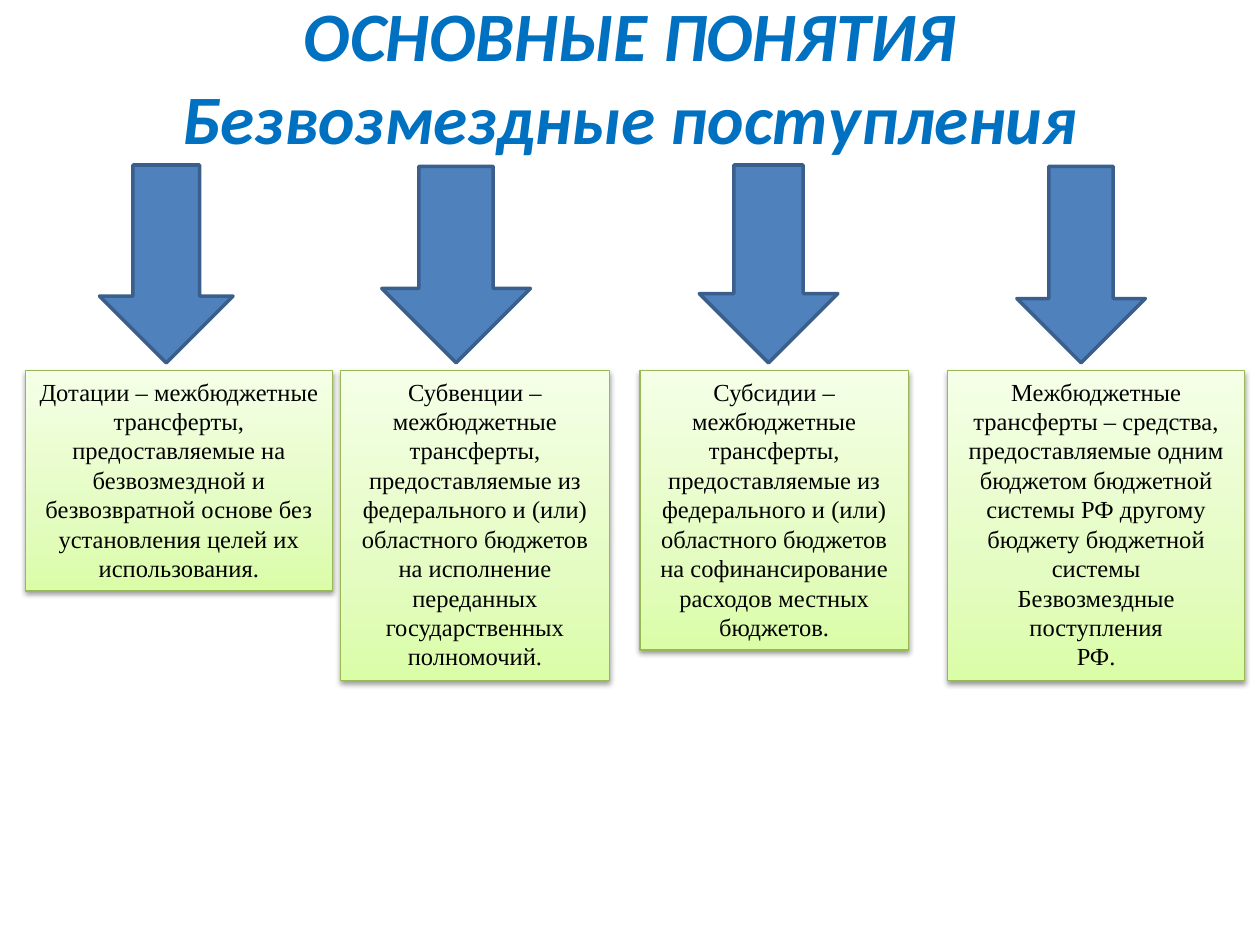
from dataclasses import dataclass

import lxml.etree
import pptx
import pptx.dml.color
import pptx.enum.shapes
import pptx.enum.text
import pptx.oxml.ns
import pptx.util

Inches = pptx.util.Inches
Pt = pptx.util.Pt
qn = pptx.oxml.ns.qn


@dataclass(frozen=True)
class Theme:
    title_font: str = "Calibri"
    title_size: float = 39.6
    title_color: str = "0070C0"
    body_font: str = "Times New Roman"
    body_size: float = 14
    body_color: str = "000000"
    arrow_fill: str = "4F81BD"
    arrow_line: str = "3A5F8C"
    card_line: str = "98B955"
    card_gradient: tuple = ((0, "DAFDA7"), (35, "E4FCC2"), (100, "F5FFE7"))
    shadow: str = "000000"


THEME = Theme()

TITLE_LINES = ["ОСНОВНЫЕ ПОНЯТИЯ", "Безвозмездные поступления"]
ARROW_BOTTOM = 2.88
CARD_TOP = 2.94

# Arrow: left, top, width. Card: left, width, height.
CONCEPTS = [
    {
        "arrow": (0.79, 1.31, 1.06),
        "card": (0.2, 2.44, 1.75),
        "text": [
            "Дотации – межбюджетные трансферты, предоставляемые на",
            "безвозмездной и безвозвратной основе без установления целей их",
            "использования.",
        ],
    },
    {
        "arrow": (3.03, 1.32, 1.18),
        "card": (2.7, 2.14, 2.46),
        "text": [
            "Субвенции – межбюджетные трансферты, предоставляемые из",
            "федерального и (или) областного бюджетов на исполнение переданных",
            "государственных полномочий.",
        ],
    },
    {
        "arrow": (5.55, 1.31, 1.1),
        "card": (5.08, 2.13, 2.22),
        "text": [
            "Субсидии – межбюджетные трансферты, предоставляемые из",
            "федерального и (или) областного бюджетов на софинансирование",
            "расходов местных бюджетов.",
        ],
    },
    {
        "arrow": (8.07, 1.32, 1.02),
        "card": (7.52, 2.36, 2.46),
        "text": [
            "Межбюджетные трансферты – средства, предоставляемые одним",
            "бюджетом бюджетной системы РФ другому бюджету бюджетной системы",
            "Безвозмездные поступления",
            "РФ.",
        ],
    },
]


def rgb(color):
    return pptx.dml.color.RGBColor.from_string(color)


def add_run(paragraph, text, font, size, color, emphasis=False):
    run = paragraph.add_run()
    run.text = text
    run.font.name = font
    run.font.size = Pt(size)
    run.font.color.rgb = rgb(color)
    run.font.bold = run.font.italic = emphasis


def add_preset(slide, preset, left, top, width, height, line_color, line_width):
    shape = slide.shapes.add_shape(
        preset, Inches(left), Inches(top), Inches(width), Inches(height)
    )
    shape.shadow.inherit = False
    shape.line.color.rgb = rgb(line_color)
    shape.line.width = Pt(line_width)
    return shape


def add_color(parent, color):
    return lxml.etree.SubElement(parent, qn("a:srgbClr"), val=color)


def set_card_gradient(shape):
    """Replace the two default stops with the theme's, running bottom to top."""
    shape.fill.gradient()
    shape.fill.gradient_angle = 90
    stops = shape.element.spPr.find(qn("a:gradFill")).find(qn("a:gsLst"))
    for stop in list(stops):
        stops.remove(stop)
    for position, color in THEME.card_gradient:
        stop = lxml.etree.SubElement(stops, qn("a:gs"), pos=str(position * 1000))
        add_color(stop, color)


def add_card_shadow(shape):
    effects = shape.element.spPr.find(qn("a:effectLst"))
    shadow = lxml.etree.SubElement(
        effects,
        qn("a:outerShdw"),
        blurRad=str(Pt(3.1)),
        dist=str(Pt(1.6)),
        dir="5400000",
        rotWithShape="0",
    )
    color = add_color(shadow, THEME.shadow)
    lxml.etree.SubElement(color, qn("a:alpha"), val="38000")


def add_title(slide):
    box = slide.shapes.add_textbox(Inches(0.5), Inches(0), Inches(9), Inches(1.19))
    frame = box.text_frame
    frame.word_wrap = True
    frame.margin_top = frame.margin_bottom = 0
    frame.vertical_anchor = pptx.enum.text.MSO_ANCHOR.MIDDLE
    paragraph = frame.paragraphs[0]
    paragraph.alignment = pptx.enum.text.PP_ALIGN.CENTER
    for index, line in enumerate(TITLE_LINES):
        if index:
            paragraph.add_line_break()
        add_run(paragraph, line, THEME.title_font, THEME.title_size,
                THEME.title_color, emphasis=True)


def add_arrow(slide, left, top, width):
    arrow = add_preset(
        slide, pptx.enum.shapes.MSO_SHAPE.DOWN_ARROW,
        left, top, width, ARROW_BOTTOM - top, THEME.arrow_line, 2,
    )
    arrow.fill.solid()
    arrow.fill.fore_color.rgb = rgb(THEME.arrow_fill)


def add_card(slide, left, width, height, texts):
    card = add_preset(
        slide, pptx.enum.shapes.MSO_SHAPE.RECTANGLE,
        left, CARD_TOP, width, height, THEME.card_line, 0.75,
    )
    set_card_gradient(card)
    add_card_shadow(card)
    frame = card.text_frame
    frame.word_wrap = True
    frame.auto_size = pptx.enum.text.MSO_AUTO_SIZE.SHAPE_TO_FIT_TEXT
    frame.vertical_anchor = pptx.enum.text.MSO_ANCHOR.TOP
    for index, text in enumerate(texts):
        paragraph = frame.add_paragraph() if index else frame.paragraphs[0]
        paragraph.alignment = pptx.enum.text.PP_ALIGN.CENTER
        add_run(paragraph, text, THEME.body_font, THEME.body_size, THEME.body_color)


def main():
    presentation = pptx.Presentation()
    presentation.slide_width = Inches(10)
    presentation.slide_height = Inches(7.5)
    slide = presentation.slides.add_slide(presentation.slide_layouts[6])
    add_title(slide)
    for concept in CONCEPTS:
        add_arrow(slide, *concept["arrow"])
        add_card(slide, *concept["card"], concept["text"])
    presentation.save("out.pptx")


if __name__ == "__main__":
    main()
